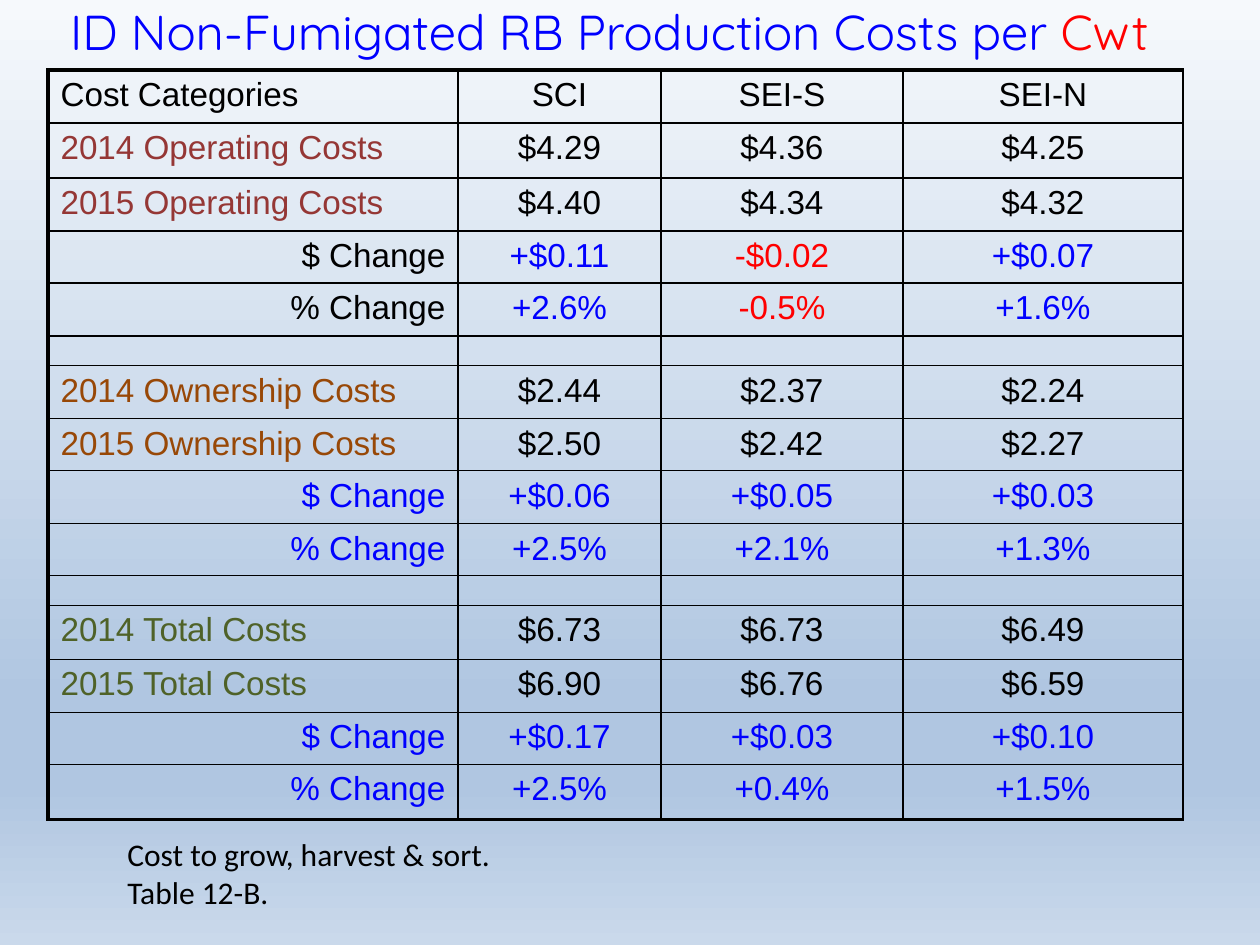
from copy import deepcopy
from dataclasses import dataclass

from lxml.etree import SubElement
from pptx import Presentation
from pptx.dml.color import RGBColor as Rgb
from pptx.enum.text import MSO_AUTO_SIZE as AutoSize, PP_ALIGN as Align
from pptx.oxml.ns import qn
from pptx.util import Emu, Pt

PX = 914400 / 126


@dataclass(frozen=True)
class Theme:
    ink: str = "000000"
    blue: str = "0000FF"
    red: str = "FF0000"
    operating: str = "953735"
    ownership: str = "984807"
    total: str = "4F6228"
    sky: tuple = ((0, "F6F9FC"), (0.74, "B0C6E1"), (0.83, "B0C6E1"), (1, "CAD9EB"))
    title_font: str = "Quicksand"
    table_font: str = "Arial"
    note_font: str = "Calibri"
    title_size: int = 28
    table_size: int = 19
    note_size: int = 18
    spacer_size: int = 8
    thin: float = 1
    thick: float = 2.25


THEME = Theme()

HEADER = ("Cost Categories", "SCI", "SEI-S", "SEI-N")
# Group name, label colour, colour of the change labels, then its four rows of values
GROUPS = (
    ("Operating", THEME.operating, THEME.ink, (
        ("$4.29", "$4.36", "$4.25"), ("$4.40", "$4.34", "$4.32"),
        ("+$0.11", "-$0.02", "+$0.07"), ("+2.6%", "-0.5%", "+1.6%"))),
    ("Ownership", THEME.ownership, THEME.blue, (
        ("$2.44", "$2.37", "$2.24"), ("$2.50", "$2.42", "$2.27"),
        ("+$0.06", "+$0.05", "+$0.03"), ("+2.5%", "+2.1%", "+1.3%"))),
    ("Total", THEME.total, THEME.blue, (
        ("$6.73", "$6.73", "$6.49"), ("$6.90", "$6.76", "$6.59"),
        ("+$0.17", "+$0.03", "+$0.10"), ("+2.5%", "+0.4%", "+1.5%"))),
)
COLUMN_WIDTHS = (410, 203, 242, 280)
ROW_HEIGHTS = (53, 55, 53, 52, 53, 29, 53, 52, 53, 52, 30, 54, 53, 52, 55)


def px(length):
    return Emu(round(length * PX))


def add_span(para, text, font, size, colour):
    span = para.add_run()
    span.text = text
    span.font.name = font
    span.font.size = Pt(size)
    span.font.color.rgb = Rgb.from_string(colour)


def paint_background(page):
    fill = page.background.fill
    fill.gradient()
    fill.gradient_angle = 270
    stop_list = page._element.find(".//" + qn("a:gsLst"))
    while len(stop_list) < len(THEME.sky):
        stop_list.append(deepcopy(stop_list[0]))
    for stop, (position, colour) in zip(fill.gradient_stops, THEME.sky):
        stop.position = position
        stop.color.rgb = Rgb.from_string(colour)


def add_text(page, box, spans, font, size, align):
    shape = page.shapes.add_textbox(*map(px, box))
    frame = shape.text_frame
    frame.word_wrap = True
    frame.auto_size = AutoSize.SHAPE_TO_FIT_TEXT
    para = frame.paragraphs[0]
    para.alignment = align
    for text, colour in spans:
        add_span(para, text, font, size, colour)


def set_borders(cell, widths):
    properties = cell._tc.get_or_add_tcPr()
    for index, (side, width) in enumerate(widths.items()):
        line = SubElement(properties, qn("a:ln" + side), w=str(Pt(width)))
        fill = SubElement(line, qn("a:solidFill"))
        SubElement(fill, qn("a:srgbClr"), val=THEME.ink)
        properties.insert(index, line)


def value_colour(text):
    return {"+": THEME.blue, "-": THEME.red}.get(text[0], THEME.ink)


def cost_rows():
    """Yield each row as a list of (text, colour, alignment) cells."""
    yield [(text, THEME.ink, Align.CENTER if col else Align.LEFT)
           for col, text in enumerate(HEADER)]
    for number, (name, colour, change_colour, values) in enumerate(GROUPS):
        if number:
            yield [("", THEME.ink, Align.LEFT)] * len(HEADER)
        labels = [(f"{year} {name} Costs", colour, Align.LEFT) for year in (2014, 2015)]
        labels += [(f"{unit} Change", change_colour, Align.RIGHT) for unit in "$%"]
        for label, row in zip(labels, values):
            yield [label] + [(text, value_colour(text), Align.CENTER) for text in row]


def add_cost_table(page, left, top):
    rows = list(cost_rows())
    box = (left, top, sum(COLUMN_WIDTHS), sum(ROW_HEIGHTS))
    table = page.shapes.add_table(len(rows), len(HEADER), *map(px, box)).table
    table.first_row = table.horz_banding = False
    for column, width in zip(table.columns, COLUMN_WIDTHS):
        column.width = px(width)
    for row, height in zip(table.rows, ROW_HEIGHTS):
        row.height = px(height)

    last = len(rows) - 1
    for r, row in enumerate(rows):
        for c, (text, colour, align) in enumerate(row):
            cell = table.cell(r, c)
            cell.fill.background()
            set_borders(cell, {
                "L": THEME.thin if c else THEME.thick,
                "R": THEME.thin,
                "T": THEME.thin if r else THEME.thick,
                "B": THEME.thick if r == last else THEME.thin,
            })
            para = cell.text_frame.paragraphs[0]
            para.alignment = align
            if text:
                add_span(para, text, THEME.table_font, THEME.table_size, colour)
            else:
                # Small type keeps the spacer rows low
                end = para._p.get_or_add_endParaRPr()
                end.set("sz", str(THEME.spacer_size * 100))


def main():
    deck = Presentation()
    deck.slide_width, deck.slide_height = px(1260), px(945)
    page = deck.slides.add_slide(deck.slide_layouts[6])
    paint_background(page)

    # Cost table
    add_cost_table(page, 48, 70)

    # Title
    add_text(page, (31, -5, 1170, 72),
             (("ID Non-Fumigated RB Production Costs per ", THEME.blue),
              ("Cwt ", THEME.red)),
             THEME.title_font, THEME.title_size, Align.CENTER)

    # Note under the table
    add_text(page, (115, 829, 451, 89),
             (("Cost to grow, harvest & sort. Table 12-B.", THEME.ink),),
             THEME.note_font, THEME.note_size, Align.LEFT)

    deck.save("out.pptx")


if __name__ == "__main__":
    main()
